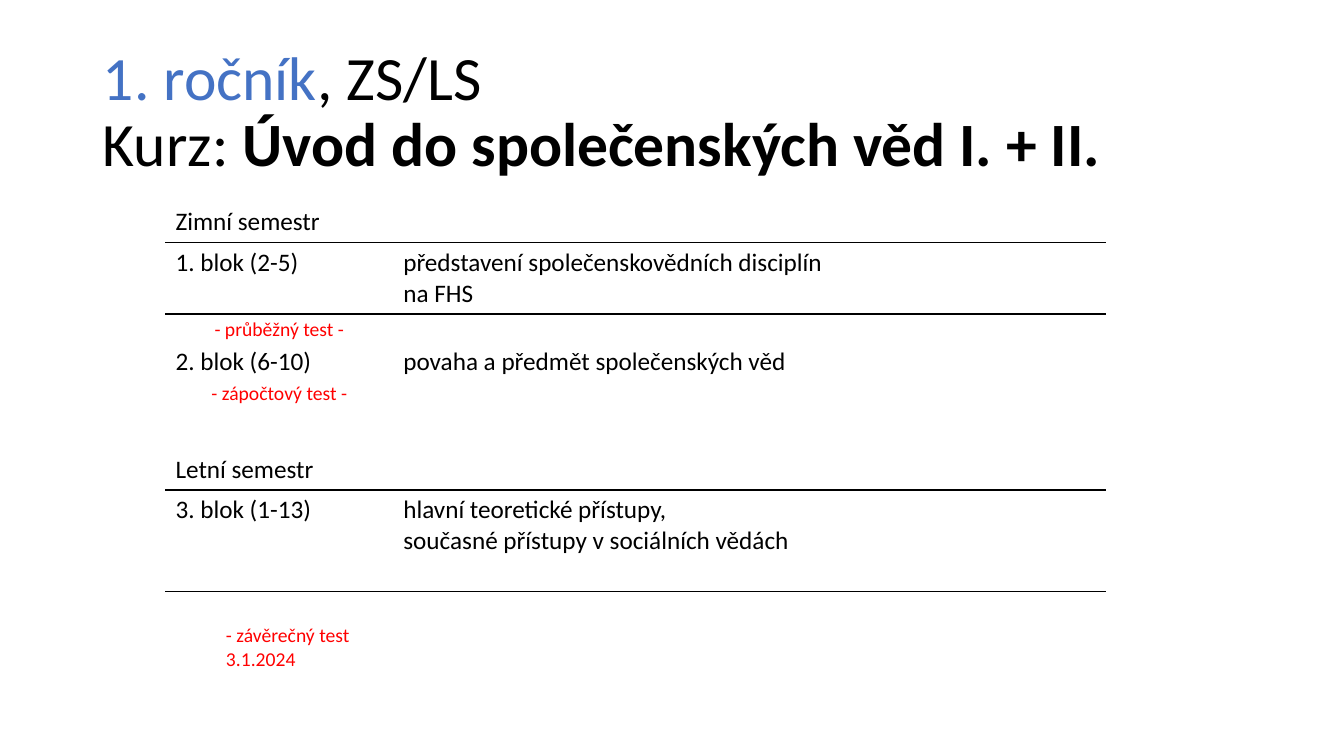
from lxml.etree import SubElement
from pptx import Presentation
from pptx.dml.color import RGBColor
from pptx.enum.text import MSO_ANCHOR, PP_ALIGN
from pptx.oxml import parse_xml
from pptx.oxml.ns import nsdecls, qn
from pptx.util import Cm, Pt

BLACK = "000000"
BLUE = "4472C4"
RED = "FF0000"
COLUMN_WIDTHS = [5.74, 11.61, 6.35]
ROWS = [
    (1.02, "block", ["Zimní semestr"]),
    (1.8, "block", ["1. blok (2-5)", "představení společenskovědních disciplín na FHS"]),
    (0.69, "test", ["- průběžný test -"]),
    (1.02, "block", ["2. blok (6-10)", "povaha a předmět společenských věd"]),
    (1.68, "test", ["- zápočtový test -"]),
    (1.02, "block", ["Letní semestr"]),
    (2.57, "block", ["3. blok (1-13)", "hlavní teoretické přístupy,\nsoučasné přístupy v sociálních vědách"]),
    (0.69, "test", []),
    (1.68, "final", ["- závěrečný test 3.1.2024"]),
    (1.68, "block", []),
]
RULES_BELOW = {0: 1.5, 1: 1.5, 5: 1.5, 6: 1}


def color(value):
    return RGBColor.from_string(value)


def add_text(paragraph, text, size=18, fill=BLACK, bold=False):
    run = paragraph.add_run()
    run.text = text
    run.font.name = "Calibri"
    run.font.size = Pt(size)
    run.font.bold = bold
    run.font.color.rgb = color(fill)


def add_title(slide, left, top, width, height):
    title = slide.shapes.title
    title.left, title.top, title.width, title.height = Cm(left), Cm(top), Cm(width), Cm(height)
    frame = title.text_frame
    frame.word_wrap = True
    frame.vertical_anchor = MSO_ANCHOR.MIDDLE
    paragraph = frame.paragraphs[0]
    paragraph.alignment = PP_ALIGN.LEFT
    paragraph.line_spacing = 0.9
    add_text(paragraph, "1. ročník", size=44, fill=BLUE)
    add_text(paragraph, ", ZS/LS", size=44)
    paragraph.add_line_break()
    add_text(paragraph, "Kurz: ", size=44)
    add_text(paragraph, "Úvod do společenských věd I. + II.", size=44, bold=True)


def set_borders(cell, above, below):
    cell.fill.background()
    properties = cell._tc.get_or_add_tcPr()
    for index, (side, weight) in enumerate(zip("LRTB", (0, 0, above, below))):
        paint = f'<a:solidFill><a:srgbClr val="{BLACK}"/></a:solidFill>' if weight else "<a:noFill/>"
        line = f'<a:ln{side} {nsdecls("a")} w="{int(Pt(weight))}">{paint}</a:ln{side}>'
        properties.insert(index, parse_xml(line))


def fill_cell(cell, kind, text):
    size, fill = (18, BLACK) if kind == "block" else (14, RED)
    if kind == "test":
        cell.margin_left = cell.margin_right = cell.margin_top = cell.margin_bottom = 0
    frame = cell.text_frame
    for index, line in enumerate(text.split("\n")):
        paragraph = frame.add_paragraph() if index else frame.paragraphs[0]
        if line:
            add_text(paragraph, line, size=size, fill=fill)
        else:
            SubElement(paragraph._p, qn("a:endParaRPr"), sz=str(size * 100))
        if kind == "test":
            paragraph.alignment = PP_ALIGN.CENTER
        elif kind == "final":
            paragraph.level = 1
            properties = paragraph._p.get_or_add_pPr()
            properties.set("marL", str(int(Cm(1.27))))
            properties.set("indent", "0")


def add_schedule(slide, left, top):
    heights = [height for height, kind, texts in ROWS]
    frame = slide.shapes.add_table(len(ROWS), len(COLUMN_WIDTHS), Cm(left), Cm(top),
                                   Cm(sum(COLUMN_WIDTHS)), Cm(sum(heights)))
    table = frame.table
    table.first_row = False
    table.horz_banding = False
    for column, width in zip(table.columns, COLUMN_WIDTHS):
        column.width = Cm(width)
    for row_index, (height, kind, texts) in enumerate(ROWS):
        row = table.rows[row_index]
        row.height = Cm(height)
        for column_index, cell in enumerate(row.cells):
            text = texts[column_index] if column_index < len(texts) else ""
            fill_cell(cell, kind, text)
            set_borders(cell, RULES_BELOW.get(row_index - 1, 0), RULES_BELOW.get(row_index, 0))
    table.cell(2, 0).vertical_anchor = MSO_ANCHOR.BOTTOM


def main():
    presentation = Presentation()
    presentation.slide_width = Cm(33.87)
    presentation.slide_height = Cm(19.05)
    slide = presentation.slides.add_slide(presentation.slide_layouts[5])
    add_title(slide, 2.34, 1.02, 29.21, 3.68)
    add_schedule(slide, 4.17, 5.08)
    presentation.save("out.pptx")


if __name__ == "__main__":
    main()
